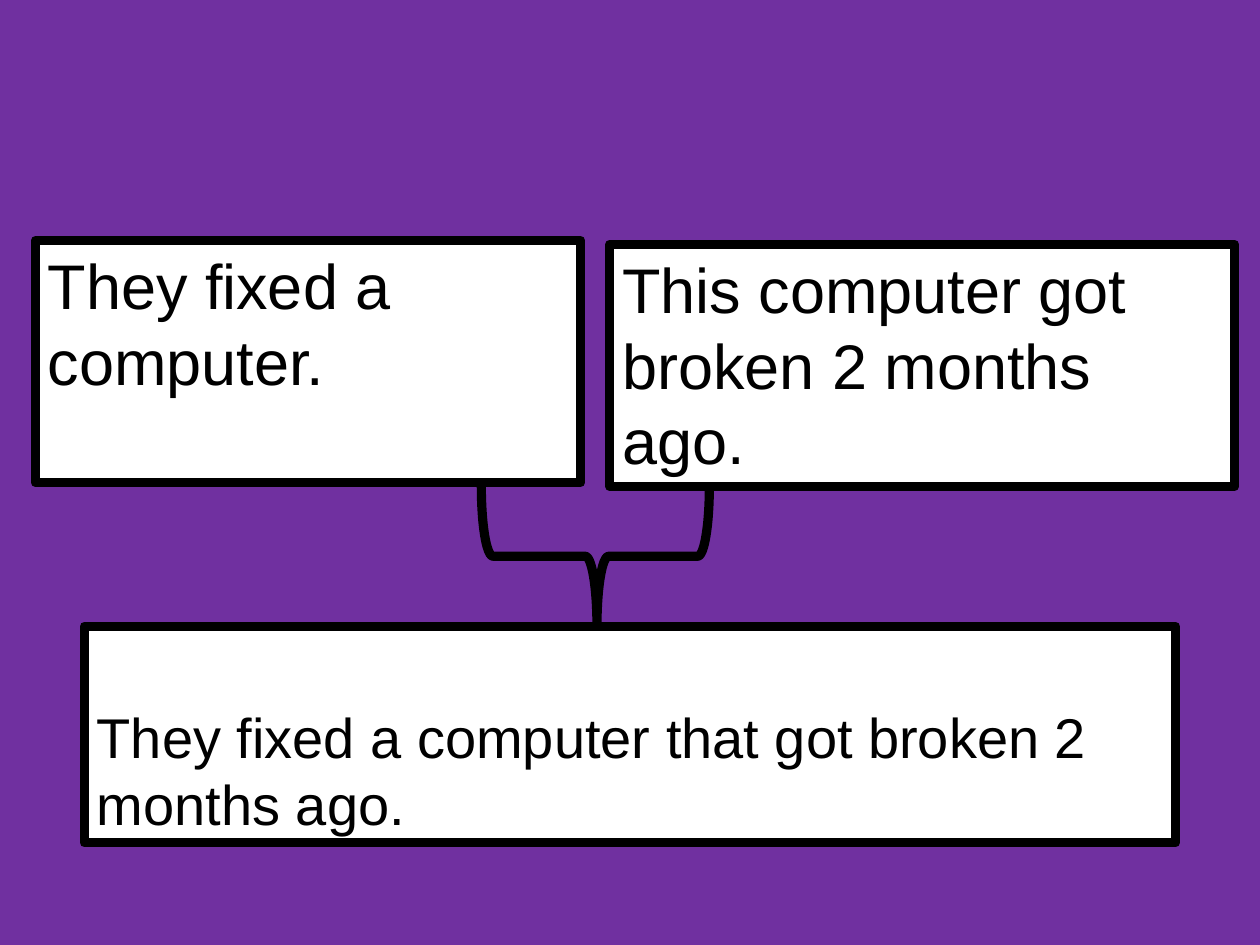
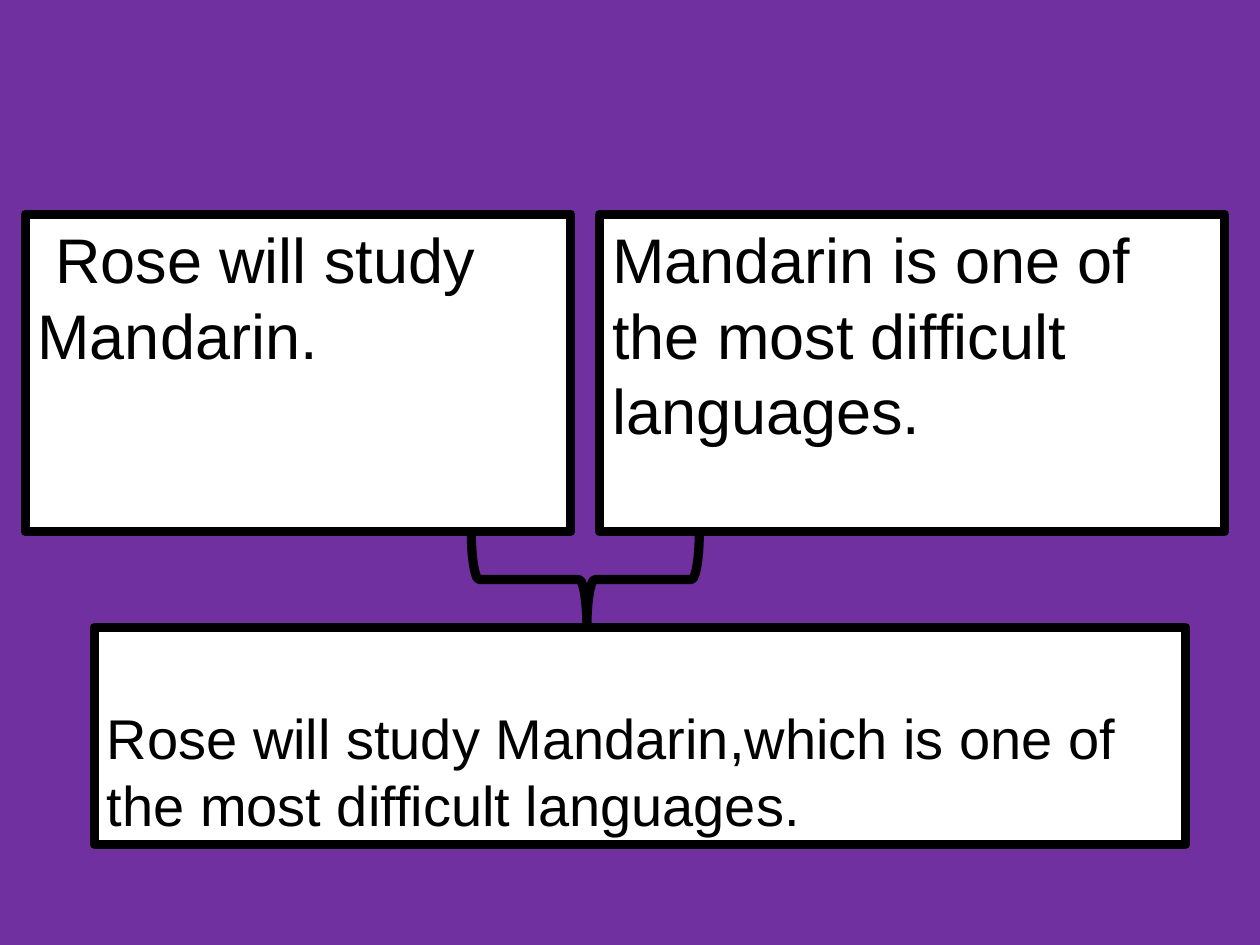
import dataclasses
import pptx
import pptx.util
import pptx.dml.color
import pptx.enum.shapes
import pptx.enum.text

Inches = pptx.util.Inches
Pt = pptx.util.Pt
RGB = pptx.dml.color.RGBColor
Kind = pptx.enum.shapes.MSO_SHAPE
Anchor = pptx.enum.text.MSO_ANCHOR
Align = pptx.enum.text.PP_ALIGN


@dataclasses.dataclass(frozen=True)
class Theme:
    back: RGB = RGB.from_string("7030A0")
    paper: RGB = RGB.from_string("FFFFFF")
    ink: RGB = RGB.from_string("000000")
    font: str = "Arial"
    clause: float = 36
    result: float = 32
    line: float = 5.25


THEME = Theme()
GAP = 0.23
LEFT_WIDTH = 4.33
RIGHT_WIDTH = 4.96
RESULT_SIZE = (8.66, 1.72)
BRACE_WIDTH = 1.81


def add_slide(deck):
    slide = deck.slides.add_slide(deck.slide_layouts[6])
    fill = slide.background.fill
    fill.solid()
    fill.fore_color.rgb = THEME.back
    return slide


def outline(shape):
    shape.shadow.inherit = False
    shape.line.color.rgb = THEME.ink
    shape.line.width = Pt(THEME.line)


def add_box(slide, text, left, top, width, height, size, anchor=Anchor.TOP):
    box = slide.shapes.add_shape(
        Kind.RECTANGLE, Inches(left), Inches(top), Inches(width), Inches(height))
    outline(box)
    box.fill.solid()
    box.fill.fore_color.rgb = THEME.paper
    frame = box.text_frame
    frame.word_wrap = True
    frame.vertical_anchor = anchor
    frame.text = text
    para = frame.paragraphs[0]
    para.alignment = Align.LEFT
    para.font.name = THEME.font
    para.font.size = Pt(size)
    para.font.color.rgb = THEME.ink


def add_brace(slide, center, top, bottom):
    height = bottom - top
    middle = (top + bottom) / 2
    brace = slide.shapes.add_shape(
        Kind.RIGHT_BRACE, Inches(center - height / 2),
        Inches(middle - BRACE_WIDTH / 2), Inches(height), Inches(BRACE_WIDTH))
    brace.rotation = 90
    brace.adjustments[0] = 0.083
    brace.adjustments[1] = 0.493
    brace.fill.background()
    outline(brace)


def add_merge(deck, first, second, result, left, tops, height, base):
    slide = add_slide(deck)
    edge = left + LEFT_WIDTH
    add_box(slide, first, left, tops[0], LEFT_WIDTH, height, THEME.clause)
    add_box(slide, second, edge + GAP, tops[1], RIGHT_WIDTH, height, THEME.clause)
    add_box(slide, result, *base, *RESULT_SIZE, THEME.result, Anchor.BOTTOM)
    add_brace(slide, edge + GAP / 2, tops[1] + height, base[1])


def main():
    deck = pptx.Presentation()
    deck.slide_width = Inches(10)
    deck.slide_height = Inches(7.5)
    add_merge(
        deck, "They fixed a computer.", "This computer got broken 2 months ago.",
        "They fixed a computer that got broken 2 months ago.",
        left=0.28, tops=(1.91, 1.94), height=1.92, base=(0.67, 4.97))
    add_merge(
        deck, " Rose will study Mandarin.",
        "Mandarin is one of the most difficult languages.",
        "Rose will study Mandarin,which is one of the most difficult languages.",
        left=0.2, tops=(1.7, 1.7), height=2.52, base=(0.75, 4.98))
    deck.save("out.pptx")


if __name__ == "__main__":
    main()
